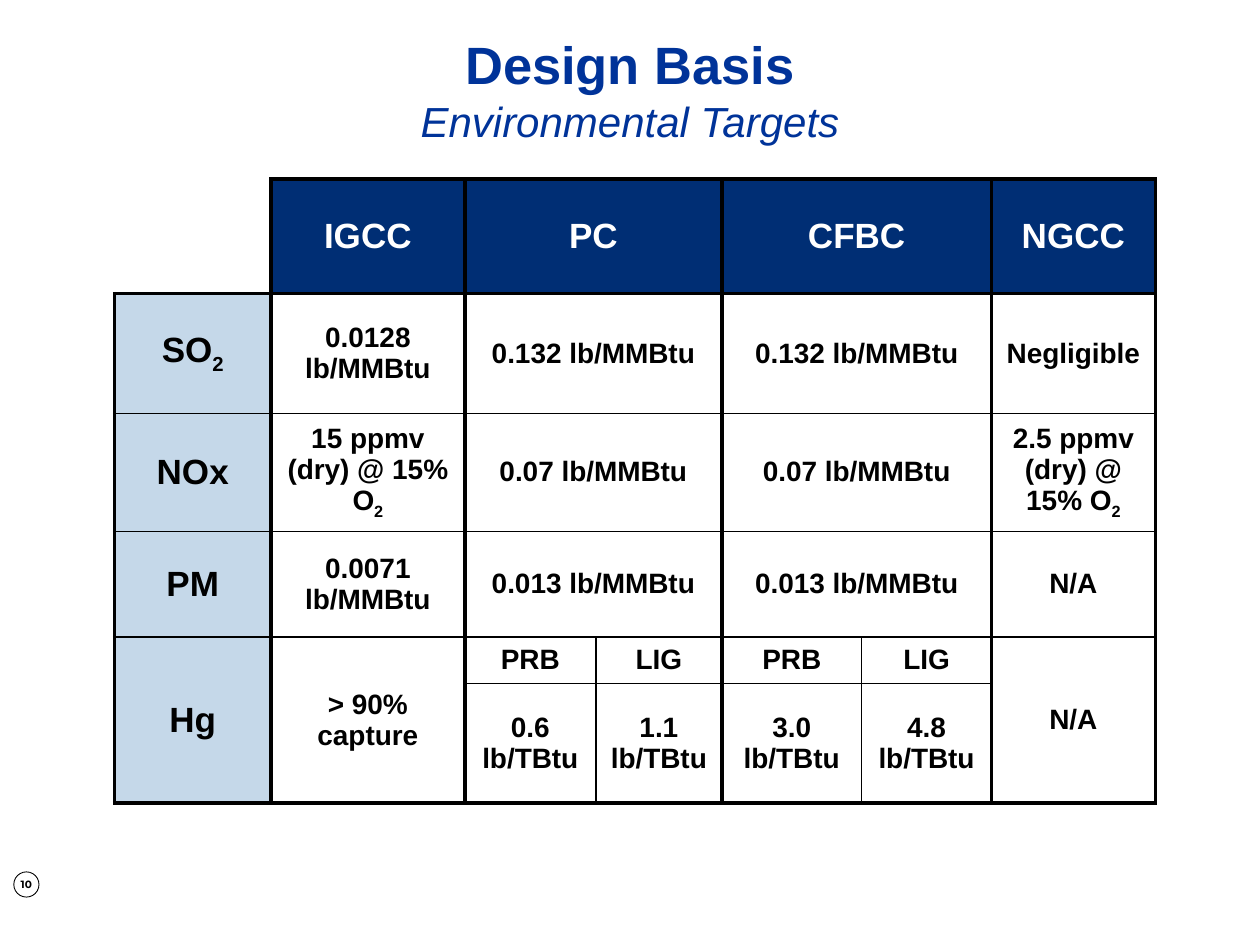
from lxml.etree import SubElement
from pptx import Presentation
from pptx.dml.color import RGBColor
from pptx.enum.shapes import MSO_SHAPE
from pptx.enum.text import MSO_ANCHOR, PP_ALIGN
from pptx.oxml.ns import qn
from pptx.util import Inches, Pt

BLACK = RGBColor(0x00, 0x00, 0x00)
WHITE = RGBColor(0xFF, 0xFF, 0xFF)
TITLE_BLUE = RGBColor(0x00, 0x33, 0x99)
HEADER_BLUE = RGBColor(0x00, 0x2E, 0x74)
LABEL_BLUE = RGBColor(0xC5, 0xD8, 0xE9)

HEAVY, THIN, NO_LINE = 2.25, 1, 0
SPLIT_ROW = 4
COLUMN_WIDTHS = [1.24, 1.54, 1.04, 1, 1.11, 1.03, 1.3]
ROW_HEIGHTS = [0.91, 0.95, 0.88, 0.84, 0.35, 0.95]
TARGETS = [
    ["", "IGCC", "PC", None, "CFBC", None, "NGCC"],
    ["SO_2", "0.0128 lb/MMBtu", "0.132 lb/MMBtu", None, "0.132 lb/MMBtu", None, "Negligible"],
    ["NOx", "15 ppmv (dry) @ 15% O_2", "0.07 lb/MMBtu", None, "0.07 lb/MMBtu", None,
     "2.5 ppmv (dry) @ 15% O_2"],
    ["PM", "0.0071 lb/MMBtu", "0.013 lb/MMBtu", None, "0.013 lb/MMBtu", None, "N/A"],
    ["Hg", "> 90% capture", "PRB", "LIG", "PRB", "LIG", "N/A"],
    [None, None, "0.6\vlb/TBtu", "1.1\vlb/TBtu", "3.0\vlb/TBtu", "4.8\vlb/TBtu", None],
]


def vertical_weight(edge, row):
    if edge in (3, 5):
        return THIN if row >= SPLIT_ROW else NO_LINE
    return NO_LINE if (edge, row) == (0, 0) else HEAVY


def horizontal_weight(edge, column):
    if (edge, column) == (0, 0):
        return NO_LINE
    if edge in (0, 1, len(ROW_HEIGHTS)):
        return HEAVY
    return NO_LINE if edge == 5 and column in (0, 1, 6) else THIN


def set_borders(cell, row, column):
    right = column + (cell.span_width if cell.is_merge_origin else 1)
    bottom = row + (cell.span_height if cell.is_merge_origin else 1)
    weights = {
        "a:lnL": vertical_weight(column, row),
        "a:lnR": vertical_weight(right, row),
        "a:lnT": horizontal_weight(row, column),
        "a:lnB": horizontal_weight(bottom, column),
    }
    properties = cell._tc.get_or_add_tcPr()
    for tag, weight in weights.items():
        line = SubElement(properties, qn(tag), w=str(Pt(weight)))
        if weight:
            fill = SubElement(line, qn("a:solidFill"))
            SubElement(fill, qn("a:srgbClr"), val=str(BLACK))
        else:
            SubElement(line, qn("a:noFill"))


def write_cell(cell, text, size, color):
    cell.vertical_anchor = MSO_ANCHOR.MIDDLE
    para = cell.text_frame.paragraphs[0]
    base, _, subscript = text.partition("_")
    para.text = base
    para.alignment = PP_ALIGN.CENTER
    para.font.name = "Arial"
    para.font.size = Pt(size)
    para.font.bold = True
    para.font.color.rgb = color
    if subscript:
        span = para.add_run()
        span.text = subscript
        span.font._element.set("baseline", "-25000")


def add_title(page, left, top, width, height):
    box = page.shapes.add_textbox(left, top, width, height)
    frame = box.text_frame
    frame.word_wrap = True
    frame.vertical_anchor = MSO_ANCHOR.MIDDLE
    para = frame.paragraphs[0]
    para.alignment = PP_ALIGN.CENTER
    para.font.name = "Arial"
    para.font.color.rgb = TITLE_BLUE
    heading = para.add_run()
    heading.text = "Design Basis"
    heading.font.size = Pt(30)
    heading.font.bold = True
    para.add_line_break()
    subtitle = para.add_run()
    subtitle.text = "Environmental Targets"
    subtitle.font.size = Pt(24)
    subtitle.font.italic = True


def add_targets_table(page, left, top, width, height):
    frame = page.shapes.add_table(
        len(ROW_HEIGHTS), len(COLUMN_WIDTHS), left, top, width, height)
    table = frame.table
    table.first_row = False
    table.horz_banding = False
    for column, size in zip(table.columns, COLUMN_WIDTHS):
        column.width = Inches(size)
    for row, size in zip(table.rows, ROW_HEIGHTS):
        row.height = Inches(size)
    for row in range(SPLIT_ROW):
        for column in (2, 4):
            table.cell(row, column).merge(table.cell(row, column + 1))
    for column in (0, 1, 6):
        table.cell(SPLIT_ROW, column).merge(table.cell(SPLIT_ROW + 1, column))

    for row, texts in enumerate(TARGETS):
        for column, text in enumerate(texts):
            cell = table.cell(row, column)
            set_borders(cell, row, column)
            is_header = row == 0 and column > 0
            is_label = column == 0 and row > 0
            cell.fill.solid()
            cell.fill.fore_color.rgb = (
                HEADER_BLUE if is_header else LABEL_BLUE if is_label else WHITE)
            if text:
                write_cell(cell, text, 20 if is_header or is_label else 16,
                           WHITE if is_header else BLACK)


def add_page_number(page, left, top, width, height):
    badge = page.shapes.add_shape(MSO_SHAPE.OVAL, left, top, width, height)
    badge.shadow.inherit = False
    badge.fill.solid()
    badge.fill.fore_color.rgb = WHITE
    badge.line.color.rgb = BLACK
    badge.line.width = Pt(0.5)
    frame = badge.text_frame
    frame.word_wrap = False
    frame.margin_left = frame.margin_right = frame.margin_top = frame.margin_bottom = 0
    frame.vertical_anchor = MSO_ANCHOR.MIDDLE
    para = frame.paragraphs[0]
    para.text = "10"
    para.alignment = PP_ALIGN.CENTER
    para.font.name = "Montserrat"
    para.font.size = Pt(6)
    para.font.bold = True
    para.font.color.rgb = BLACK


def main():
    deck = Presentation()
    deck.slide_width = Inches(10)
    deck.slide_height = Inches(7.5)
    page = deck.slides.add_slide(deck.slide_layouts[6])
    add_page_number(page, Inches(0.11), Inches(6.92), Inches(0.2), Inches(0.2))
    add_title(page, Inches(0.5), Inches(0.2), Inches(9), Inches(1.01))
    add_targets_table(page, Inches(0.91), Inches(1.42),
                      Inches(sum(COLUMN_WIDTHS)), Inches(sum(ROW_HEIGHTS)))
    deck.save("out.pptx")


if __name__ == "__main__":
    main()
